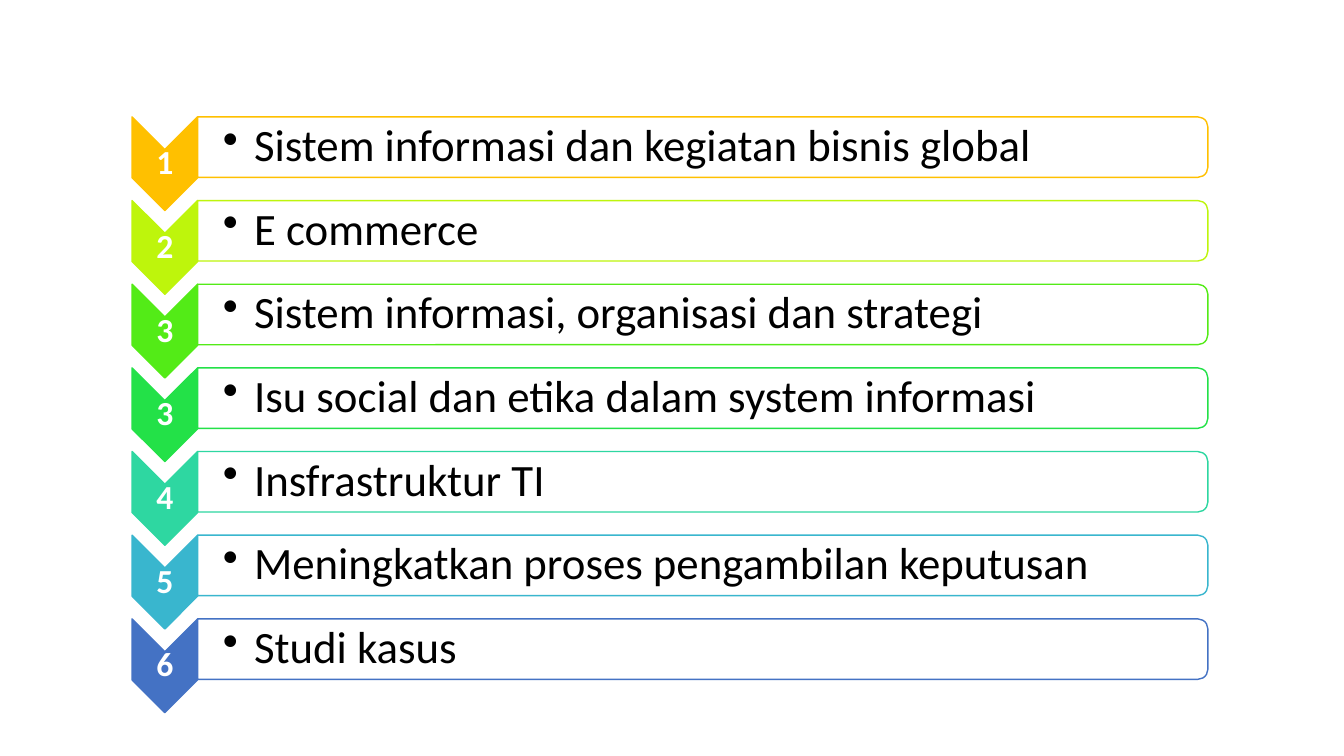
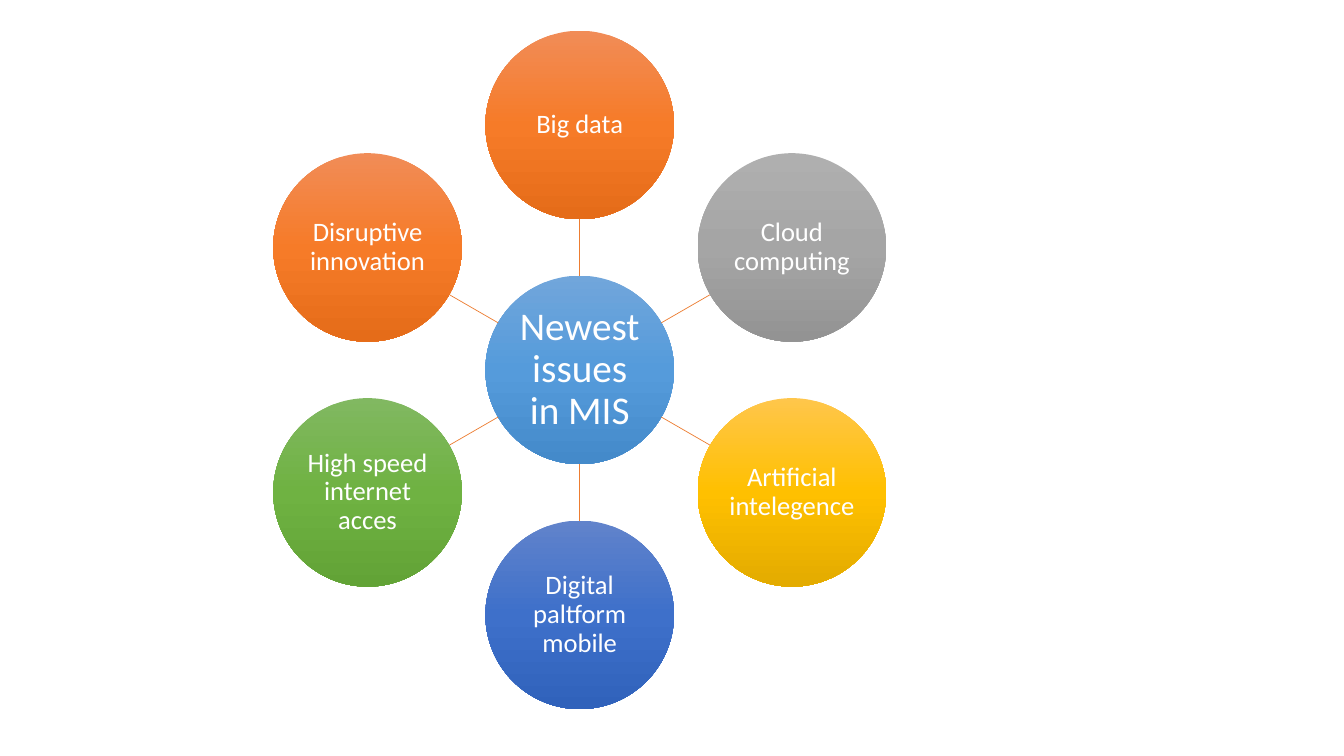
import copy
import math

import pptx
import pptx.dml.color
import pptx.enum.shapes
import pptx.enum.text
import pptx.oxml
import pptx.oxml.ns
import pptx.util

Inches = pptx.util.Inches
Pt = pptx.util.Pt
RGBColor = pptx.dml.color.RGBColor
Shapes = pptx.enum.shapes.MSO_SHAPE
Align = pptx.enum.text.PP_ALIGN
qn = pptx.oxml.ns.qn

FONT = "Calibri"
WHITE = RGBColor(0xFF, 0xFF, 0xFF)
BLACK = RGBColor(0x00, 0x00, 0x00)
SPOKE = RGBColor(0xED, 0x7D, 0x31)

AMBER = RGBColor(0xFF, 0xC0, 0x00)
LIME = RGBColor(0xBE, 0xF5, 0x0C)
BRIGHT_GREEN = RGBColor(0x53, 0xEB, 0x17)
GREEN = RGBColor(0x23, 0xE1, 0x48)
TEAL = RGBColor(0x2E, 0xD7, 0xA1)
CYAN = RGBColor(0x39, 0xB6, 0xCE)
BLUE = RGBColor(0x44, 0x72, 0xC4)

# Gradients run from top to bottom: light, middle, dark.
SKY_GRADIENT = (RGBColor(0x71, 0xA6, 0xDB), RGBColor(0x55, 0x9B, 0xDB), RGBColor(0x44, 0x8A, 0xCA))
ORANGE_GRADIENT = (RGBColor(0xF1, 0x8C, 0x57), RGBColor(0xF6, 0x7B, 0x28), RGBColor(0xE5, 0x6C, 0x19))
GRAY_GRADIENT = (RGBColor(0xAF, 0xAF, 0xAF), RGBColor(0xA5, 0xA5, 0xA5), RGBColor(0x93, 0x93, 0x93))
GOLD_GRADIENT = (RGBColor(0xFF, 0xC6, 0x4B), AMBER, RGBColor(0xE3, 0xAB, 0x00))
BLUE_GRADIENT = (RGBColor(0x61, 0x83, 0xCB), RGBColor(0x3E, 0x70, 0xCA), RGBColor(0x30, 0x62, 0xBB))
GREEN_GRADIENT = (RGBColor(0x81, 0xB8, 0x61), RGBColor(0x6F, 0xB2, 0x42), RGBColor(0x62, 0xA3, 0x36))

TOPICS = [
    ("1", "Sistem informasi dan kegiatan bisnis global", AMBER),
    ("2", "E commerce", LIME),
    ("3", "Sistem informasi, organisasi dan strategi", BRIGHT_GREEN),
    ("3", "Isu social dan etika dalam system informasi", GREEN),
    ("4", "Insfrastruktur TI", TEAL),
    ("5", "Meningkatkan proses pengambilan keputusan", CYAN),
    ("6", "Studi kasus", BLUE),
]
ISSUES = [
    ("Big data", ORANGE_GRADIENT),
    ("Cloud computing", GRAY_GRADIENT),
    ("Artificial intelegence", GOLD_GRADIENT),
    ("Digital paltform mobile", BLUE_GRADIENT),
    ("High speed internet acces", GREEN_GRADIENT),
    ("Disruptive innovation", ORANGE_GRADIENT),
]


def write_text(shape, text, size, color=WHITE, bold=False, align=Align.CENTER,
               inset=0.02, left_inset=None, bullet_indent=None):
    frame = shape.text_frame
    frame.word_wrap = True
    frame.vertical_anchor = pptx.enum.text.MSO_ANCHOR.MIDDLE
    frame.margin_right = frame.margin_top = frame.margin_bottom = Inches(inset)
    frame.margin_left = Inches(inset if left_inset is None else left_inset)
    paragraph = frame.paragraphs[0]
    paragraph.alignment = align
    paragraph.line_spacing = 0.9
    run = paragraph.add_run()
    run.text = text
    run.font.name = FONT
    run.font.size = Pt(size)
    run.font.bold = bold
    run.font.color.rgb = color
    if bullet_indent is not None:
        properties = paragraph._p.get_or_add_pPr()
        properties.set("marL", str(Inches(bullet_indent)))
        properties.set("indent", str(-Inches(bullet_indent)))
        bullet = pptx.oxml.parse_xml(
            '<a:buChar xmlns:a="http://schemas.openxmlformats.org/drawingml/2006/main" char="•"/>')
        properties.append(bullet)


def add_text_box(slide, left, top, width, height, text, size, **text_format):
    box = slide.shapes.add_textbox(Inches(left), Inches(top), Inches(width), Inches(height))
    write_text(box, text, size, **text_format)


def add_quarter_turned(slide, preset, left, top, width, height, fill, line):
    """Add a preset turned 90 degrees clockwise that ends up filling the given box."""
    shape = slide.shapes.add_shape(
        preset, Inches(left + (width - height) / 2), Inches(top + (height - width) / 2),
        Inches(height), Inches(width))
    shape.rotation = 90
    shape.shadow.inherit = False
    shape.fill.solid()
    shape.fill.fore_color.rgb = fill
    shape.line.color.rgb = line
    shape.line.width = Pt(1)


def add_topic_row(slide, left, top, width, number, topic, color):
    chevron_width, chevron_height, bar_height = 0.65, 0.93, 0.6
    bar_left, bar_width = left + chevron_width, width - chevron_width
    add_quarter_turned(slide, Shapes.CHEVRON, left, top, chevron_width, chevron_height, color, color)
    add_text_box(slide, left, top + chevron_width / 2, chevron_width,
                 chevron_height - chevron_width, number, 24, bold=True)
    add_quarter_turned(slide, Shapes.ROUND_2_SAME_RECTANGLE, bar_left, top,
                       bar_width, bar_height, WHITE, color)
    add_text_box(slide, bar_left, top + 0.03, bar_width - 0.03, bar_height - 0.06, topic, 32,
                 color=BLACK, align=Align.LEFT, left_inset=0.25, bullet_indent=0.31)


def add_topic_list(slide, left, top, width, pitch):
    for index, (number, topic, color) in enumerate(TOPICS):
        add_topic_row(slide, left, top + index * pitch, width, number, topic, color)


def fill_gradient(shape, colors):
    shape.fill.gradient()
    shape.fill.gradient_angle = 270
    stop_list = shape._element.spPr.find(".//" + qn("a:gsLst"))
    while len(stop_list) < len(colors):
        stop_list.append(copy.deepcopy(stop_list[-1]))
    for index, (stop, color) in enumerate(zip(shape.fill.gradient_stops, colors)):
        stop.position = index / (len(colors) - 1)
        stop.color.rgb = color


def add_circle(slide, center_x, center_y, diameter, text, size, colors, inset):
    circle = slide.shapes.add_shape(
        Shapes.OVAL, Inches(center_x - diameter / 2), Inches(center_y - diameter / 2),
        Inches(diameter), Inches(diameter))
    circle.shadow.inherit = False
    fill_gradient(circle, colors)
    circle.line.fill.background()
    write_text(circle, text, size, inset=inset)


def add_spoke(slide, start, end):
    spoke = slide.shapes.add_connector(
        pptx.enum.shapes.MSO_CONNECTOR.STRAIGHT, *(Inches(value) for value in start + end))
    spoke.line.color.rgb = SPOKE
    spoke.line.width = Pt(0.5)
    spoke._element.spPr.append(pptx.oxml.xmlchemy.OxmlElement("a:effectLst"))


def add_radial_diagram(slide, center_x, center_y, radius, diameter):
    def point_at(distance, angle):
        return center_x + distance * math.sin(angle), center_y - distance * math.cos(angle)

    add_circle(slide, center_x, center_y, diameter, "Newest issues in MIS", 28, SKY_GRADIENT, 0.02)
    for index, (issue, colors) in enumerate(ISSUES):
        angle = index * math.tau / len(ISSUES)
        add_spoke(slide, point_at(diameter / 2, angle), point_at(radius - diameter / 2, angle))
        add_circle(slide, *point_at(radius, angle), diameter, issue, 19, colors, 0.01)


def main():
    presentation = pptx.Presentation()
    presentation.slide_width = Inches(13.33)
    presentation.slide_height = Inches(7.5)
    blank_layout = presentation.slide_layouts[6]

    topics_slide = presentation.slides.add_slide(blank_layout)
    add_topic_list(topics_slide, left=1.31, top=1.16, width=10.67, pitch=0.83)

    issues_slide = presentation.slides.add_slide(blank_layout)
    add_radial_diagram(issues_slide, center_x=5.75, center_y=3.67, radius=2.43, diameter=1.87)

    presentation.save("out.pptx")


if __name__ == "__main__":
    main()
